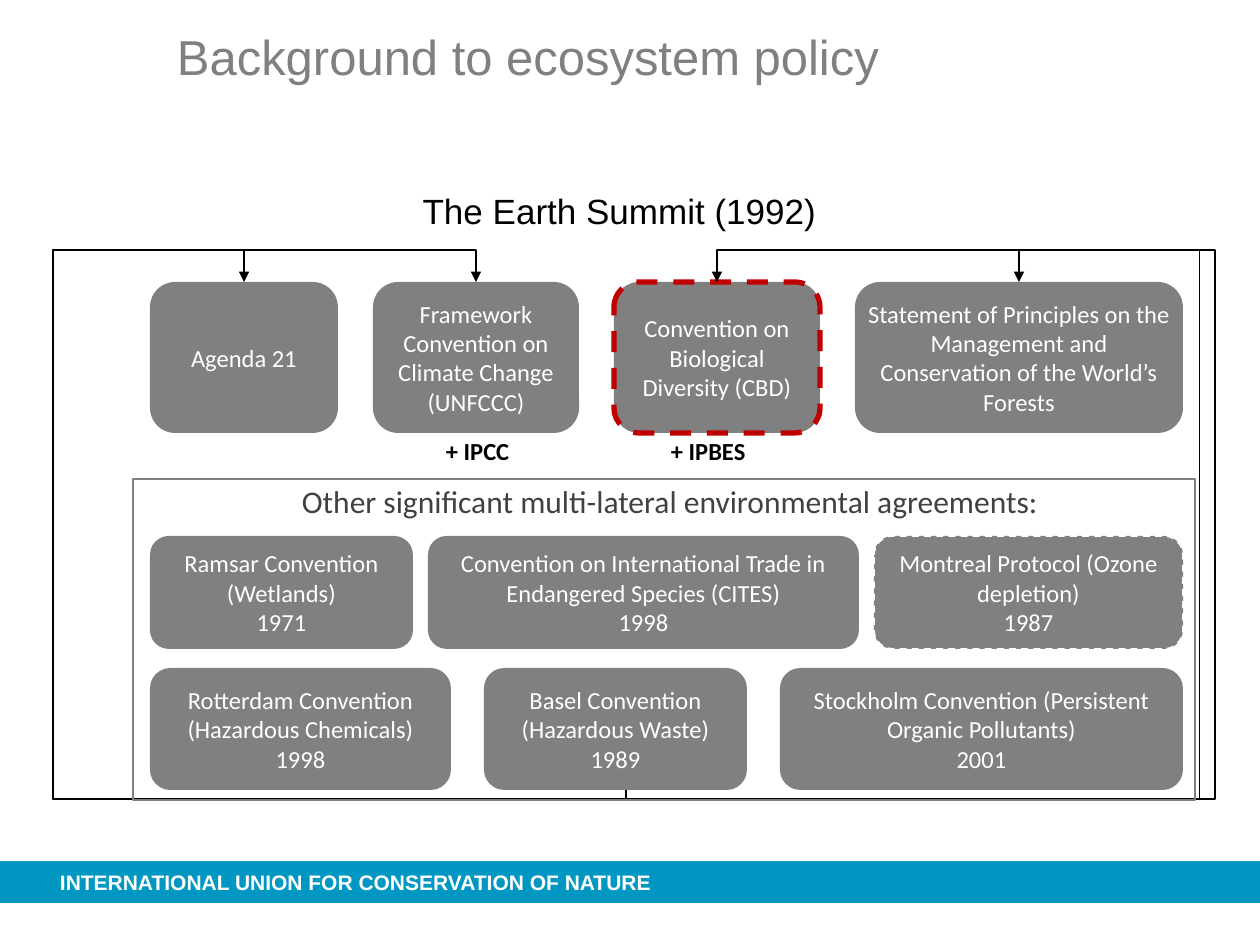
from lxml import etree
from pptx import Presentation
from pptx.dml.color import RGBColor
from pptx.enum.dml import MSO_LINE
from pptx.enum.shapes import MSO_CONNECTOR, MSO_SHAPE
from pptx.enum.text import MSO_ANCHOR, PP_ALIGN
from pptx.oxml.ns import qn
from pptx.util import Emu, Pt

COLORS = {"grey": "808080", "blue": "0098C3", "red": "C00000",
          "white": "FFFFFF", "black": "000000", "dark": "414042"}
PX = 914400 / 126


def add_shape(kind, box, fill=None, line=None, width=1, dash=None):
    """Add a preset shape; box is left, top, width, height in px."""
    sp = slide.shapes.add_shape(kind, *[Emu(round(v * PX)) for v in box])
    sp.shadow.inherit = False
    if fill:
        sp.fill.solid()
        sp.fill.fore_color.rgb = RGBColor.from_string(COLORS[fill])
    else:
        sp.fill.background()
    if line:
        sp.line.color.rgb = RGBColor.from_string(COLORS[line])
        sp.line.width = Pt(width)
        sp.line.dash_style = dash
    else:
        sp.line.fill.background()
    return sp


def write(text, size, color, font="Arial", bold=False, box=None, sp=None,
          align=PP_ALIGN.LEFT, anchor=MSO_ANCHOR.TOP, inset=0, wrap=True):
    """Write text into sp, or into a new text box at box (px)."""
    sp = sp or slide.shapes.add_textbox(*[Emu(round(v * PX)) for v in box])
    tf = sp.text_frame
    tf.word_wrap = wrap
    tf.vertical_anchor = anchor
    tf.margin_left = tf.margin_right = tf.margin_top = tf.margin_bottom = Emu(round(inset * PX))
    tf.text = text
    for p in tf.paragraphs:
        p.alignment = align
        for r in p.runs:
            r.font.name = font
            r.font.size = Pt(size)
            r.font.bold = bold
            r.font.color.rgb = RGBColor.from_string(COLORS[color])


prs = Presentation()
prs.slide_width, prs.slide_height = Emu(round(1260 * PX)), Emu(round(945 * PX))
slide = prs.slides.add_slide(prs.slide_layouts[6])

# Footer band, title and summit heading
add_shape(MSO_SHAPE.RECTANGLE, (0, 861, 1260, 42), fill="blue")
write("INTERNATIONAL UNION FOR CONSERVATION OF NATURE", 12, "white", bold=True,
      box=(60, 869, 706, 26), anchor=MSO_ANCHOR.MIDDLE)
write("Background to ecosystem policy", 28, "grey", box=(177, 27, 853, 110))
write("The Earth Summit (1992)", 20, "black", box=(84, 190, 1071, 577),
      align=PP_ALIGN.CENTER)

# Rows of agreements: top, height, then (left, width, text)
ROWS = [
    (282, 151, [
        (150, 188, "Agenda 21"),
        (373, 206, "Framework Convention on Climate Change (UNFCCC)"),
        (614, 206, "Convention on Biological Diversity (CBD)"),
        (855, 328, "Statement of Principles on the Management and "
                   "Conservation of the World’s Forests")]),
    (536, 113, [
        (150, 263, "Ramsar Convention\n(Wetlands)\n1971"),
        (428, 431, "Convention on International Trade in Endangered Species (CITES)\n1998"),
        (874, 309, "Montreal Protocol (Ozone depletion)\n1987")]),
    (668, 122, [
        (150, 301, "Rotterdam Convention (Hazardous Chemicals)\n1998"),
        (484, 263, "Basel Convention (Hazardous Waste)\n1989"),
        (780, 403, "Stockholm Convention (Persistent Organic Pollutants)\n2001")]),
]

# Arrows loop from the foot of the summit text round the sides to the top row
START_X, START_Y, END_Y, OVERSHOOT = 626, 767, 282, 32
SIDES = (53, 53, 1200, 1215)
length = START_Y - END_Y
mid_y = (START_Y + END_Y) / 2
for (left, width, _), side in zip(ROWS[0][2], SIDES):
    end_x = left + width / 2
    run = START_X - end_x
    mid_x = (START_X + end_x) / 2
    # Laid out lying down, then turned a quarter
    ends = (mid_x + length / 2, mid_y - run / 2, mid_x - length / 2, mid_y + run / 2)
    cxn = slide.shapes.add_connector(MSO_CONNECTOR.ELBOW, *[Emu(round(v * PX)) for v in ends])
    cxn.line.color.rgb = RGBColor.from_string(COLORS["black"])
    cxn.line.width = Pt(0.75)
    spPr = cxn._element.spPr
    spPr.find(qn("a:xfrm")).set("rot", "5400000")
    geom = spPr.find(qn("a:prstGeom"))
    geom.set("prst", "bentConnector5")
    guides = geom.find(qn("a:avLst"))
    if guides is None:
        guides = etree.SubElement(geom, qn("a:avLst"))
    ratios = (-OVERSHOOT / length, (START_X - side) / run, 1 + OVERSHOOT / length)
    for i, ratio in enumerate(ratios, 1):
        etree.SubElement(guides, qn("a:gd"), name=f"adj{i}", fmla=f"val {round(ratio * 100000)}")
    etree.SubElement(spPr.find(qn("a:ln")), qn("a:tailEnd"), type="triangle")
    etree.SubElement(spPr, qn("a:effectLst"))

for top, height, boxes in ROWS:
    for left, width, text in boxes:
        sp = add_shape(MSO_SHAPE.FLOWCHART_ALTERNATE_PROCESS,
                       (left, top, width, height), fill="grey")
        write(text, 14, "white", "Calibri", sp=sp, align=PP_ALIGN.CENTER,
              anchor=MSO_ANCHOR.MIDDLE, inset=3)
        if "(CBD)" in text:
            sp.line.color.rgb = RGBColor.from_string(COLORS["red"])
            sp.line.width = Pt(3)
            sp.line.dash_style = MSO_LINE.DASH
            # The arrow tip lies over the dashed border
            sp._element.getparent().insert(2, sp._element)

# Science panels and the frame around the other agreements
for text, left, width in [("+ IPCC", 443, 86), ("+ IPBES", 668, 101)]:
    write(text, 14, "black", "Calibri", bold=True, box=(left, 433, width, 35),
          inset=3, wrap=False)
write("Other significant multi-lateral environmental agreements:", 18, "dark",
      "Calibri", box=(167, 479, 1006, 57), align=PP_ALIGN.CENTER, inset=3)
add_shape(MSO_SHAPE.RECTANGLE, (133, 479, 1062, 321), line="grey")
add_shape(MSO_SHAPE.ROUNDED_RECTANGLE, (874, 536, 309, 113), line="white", dash=MSO_LINE.DASH)

prs.save("out.pptx")
